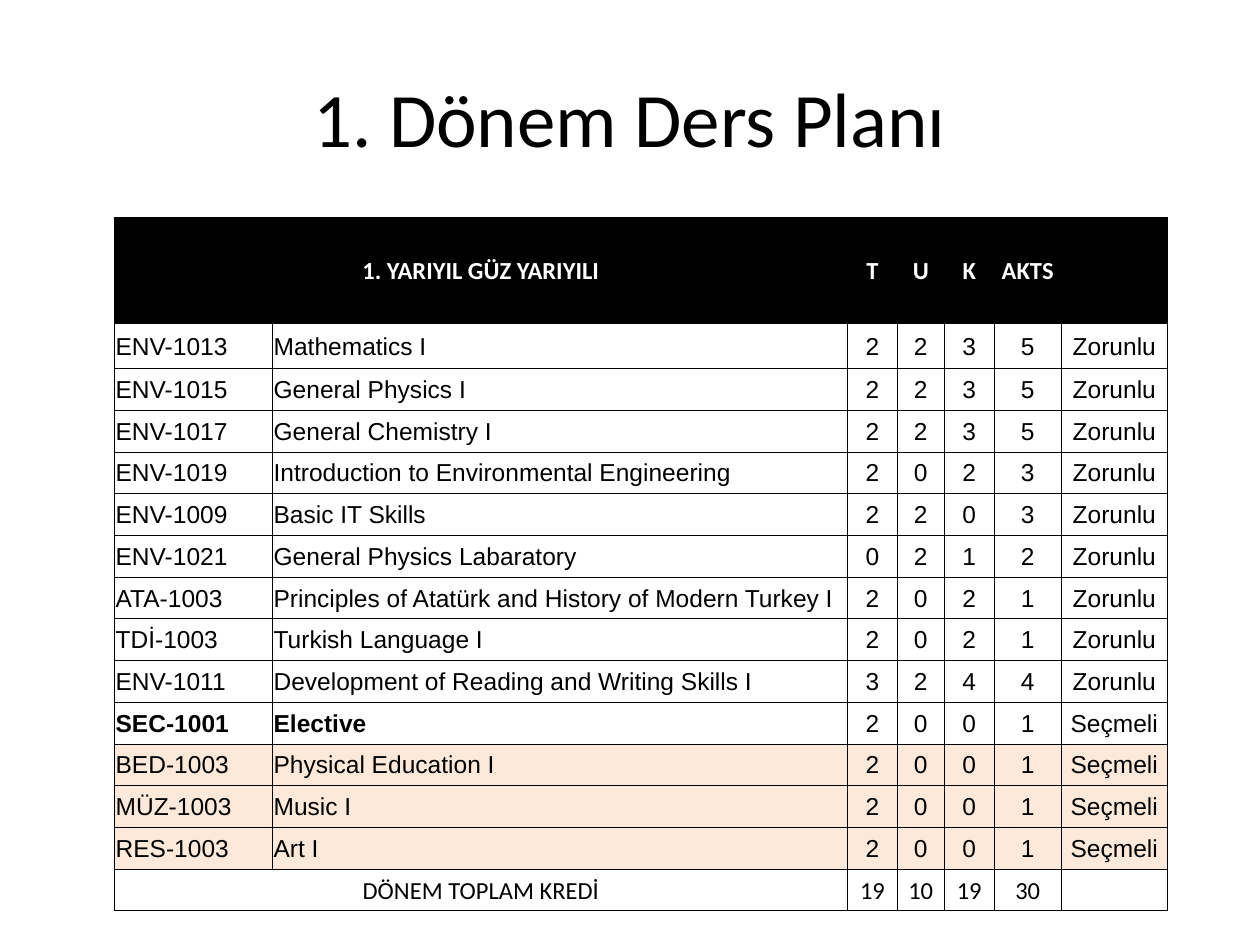
from dataclasses import dataclass

from lxml import etree
from pptx import Presentation
from pptx import util as u
from pptx.dml.color import RGBColor
from pptx.enum import text
from pptx.oxml.ns import qn

COLORS = {"ink": "000000", "paper": "FFFFFF", "elective": "FDE9D9"}
COLUMN_WIDTHS = [90.3, 328.6, 28.6, 26.6, 28.8, 38.1, 60.9]
HEADER_HEIGHT, FIRST_ROW_HEIGHT, ROW_HEIGHT = 60.5, 25.7, 23.85
BORDER_WIDTH = 0.5
INSET = 0.7


@dataclass
class Row:
    values: tuple
    font: str = "Arial"
    ink: str = "ink"
    fill: str = ""
    bold_columns: int = 0
    merged_label: bool = False


def course(code: str, name: str, credits: str, kind: str = "Zorunlu", **style) -> Row:
    return Row((code, name, *credits.split(), kind), **style)


def elective(code: str, name: str) -> Row:
    return course(code, name, "2 0 0 1", "Seçmeli", fill="elective")


ROWS = [
    Row(("1. YARIYIL GÜZ YARIYILI", "", "T", "U", "K", "AKTS", ""), "Calibri",
        "paper", "ink", bold_columns=7, merged_label=True),
    course("ENV-1013", "Mathematics I", "2 2 3 5"),
    course("ENV-1015", "General Physics I", "2 2 3 5"),
    course("ENV-1017", "General Chemistry I", "2 2 3 5"),
    course("ENV-1019", "Introduction to Environmental Engineering", "2 0 2 3"),
    course("ENV-1009", "Basic IT Skills", "2 2 0 3"),
    course("ENV-1021", "General Physics Labaratory", "0 2 1 2"),
    course("ATA-1003", "Principles of Atatürk and History of Modern Turkey I", "2 0 2 1"),
    course("TDİ-1003", "Turkish Language I", "2 0 2 1"),
    course("ENV-1011", "Development of Reading and Writing Skills I", "3 2 4 4"),
    course("SEC-1001", "Elective", "2 0 0 1", "Seçmeli", bold_columns=2),
    elective("BED-1003", "Physical Education I"),
    elective("MÜZ-1003", "Music I"),
    elective("RES-1003", "Art I"),
    Row(("DÖNEM TOPLAM KREDİ", "", "19", "10", "19", "30", ""), "Calibri",
        merged_label=True),
]


def color(name: str) -> RGBColor:
    return RGBColor.from_string(COLORS[name])


def format_paragraph(para, font: str, size: float, ink: str, bold: bool, align) -> None:
    para.alignment = align
    para.font.name = font
    para.font.size = u.Pt(size)
    para.font.bold = bold
    para.font.color.rgb = color(ink)


def add_borders(cell) -> None:
    properties = cell._tc.get_or_add_tcPr()
    for index, side in enumerate(("a:lnL", "a:lnR", "a:lnT", "a:lnB")):
        line = etree.Element(qn(side), w=str(u.Pt(BORDER_WIDTH)))
        fill = etree.SubElement(line, qn("a:solidFill"))
        etree.SubElement(fill, qn("a:srgbClr"), val=COLORS["ink"])
        properties.insert(index, line)


def fill_cell(cell, row: Row, column: int) -> None:
    cell.margin_left = cell.margin_right = cell.margin_top = u.Pt(INSET)
    cell.margin_bottom = u.Pt(0)
    cell.vertical_anchor = text.MSO_ANCHOR.MIDDLE
    if row.fill:
        cell.fill.solid()
        cell.fill.fore_color.rgb = color(row.fill)
    else:
        cell.fill.background()
    add_borders(cell)
    if row.values[column]:
        cell.text = row.values[column]
    centred = column > 1 or row.merged_label
    format_paragraph(cell.text_frame.paragraphs[0], row.font, 14, row.ink,
                     column < row.bold_columns,
                     text.PP_ALIGN.CENTER if centred else text.PP_ALIGN.LEFT)


def add_course_table(page, left: float, top: float) -> None:
    heights = [HEADER_HEIGHT, FIRST_ROW_HEIGHT] + [ROW_HEIGHT] * (len(ROWS) - 2)
    table = page.shapes.add_table(
        len(ROWS), len(COLUMN_WIDTHS), u.Pt(left), u.Pt(top),
        u.Pt(sum(COLUMN_WIDTHS)), u.Pt(sum(heights))).table
    table.first_row = table.horz_banding = False
    for column, width in zip(table.columns, COLUMN_WIDTHS):
        column.width = u.Pt(width)
    for index, (row, height) in enumerate(zip(ROWS, heights)):
        table.rows[index].height = u.Pt(height)
        for column in range(len(COLUMN_WIDTHS)):
            fill_cell(table.cell(index, column), row, column)
        if row.merged_label:
            table.cell(index, 0).merge(table.cell(index, 1))


def main() -> None:
    deck = Presentation()
    deck.slide_width, deck.slide_height = u.Pt(720), u.Pt(540)
    page = deck.slides.add_slide(deck.slide_layouts[5])

    # Title
    title = page.shapes.title
    title.left, title.top = u.Pt(36), u.Pt(21.6)
    title.width, title.height = u.Pt(648), u.Pt(90)
    title.text_frame.text = "1. Dönem Ders Planı"
    title.text_frame.vertical_anchor = text.MSO_ANCHOR.MIDDLE
    format_paragraph(title.text_frame.paragraphs[0], "Calibri", 44, "ink", False,
                     text.PP_ALIGN.CENTER)

    # Course plan
    add_course_table(page, 65.4, 124.4)
    deck.save("out.pptx")


if __name__ == "__main__":
    main()
